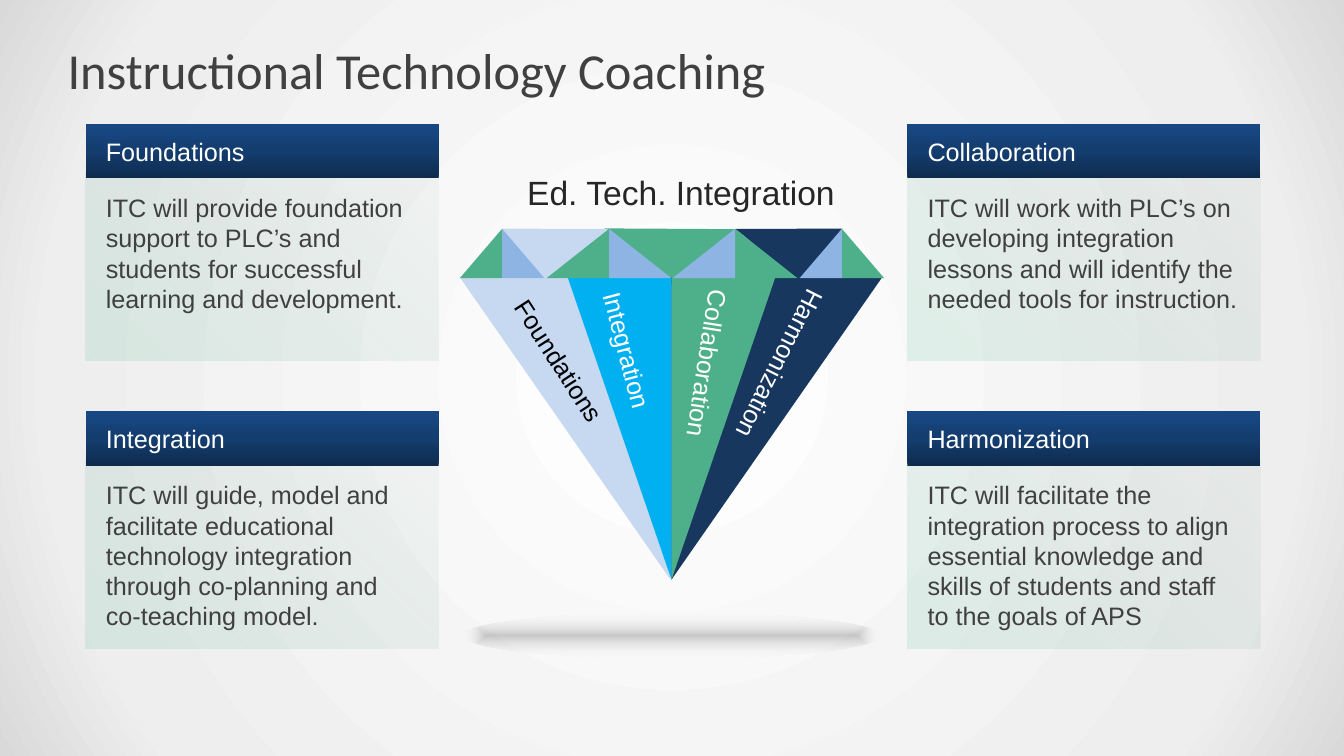
from lxml import etree
from pptx import Presentation
from pptx.dml.color import RGBColor as RGB
from pptx.enum.shapes import MSO_SHAPE as Shape
from pptx.enum.text import MSO_ANCHOR as Anchor, MSO_AUTO_SIZE as Auto, PP_ALIGN as Align
from pptx.oxml.ns import qn
from pptx.util import Pt

PX = 9144  # 100 px to the inch
WHITE, BLACK = RGB(255, 255, 255), RGB(0, 0, 0)
GREY, INK = RGB(0x40, 0x40, 0x40), RGB(0x26, 0x26, 0x26)
GREEN, NAVY = RGB(0x4E, 0xB0, 0x8A), RGB(0x17, 0x37, 0x5E)
PALE, BLUE, CYAN = RGB(0xC6, 0xD9, 0xF1), RGB(0x8E, 0xB4, 0xE3), RGB(0, 0xB0, 0xF0)

# Gradient stops: percent, colour, opacity in percent
GLOW = [(0, WHITE, 100), (81, RGB(0xEE, 0xEE, 0xEE), 100), (100, RGB(0xD9, 0xD9, 0xD9), 100)]
SHADE = [(0, RGB(0x80, 0x80, 0x80), 40), (100, WHITE, 0)]
MINT = [(0, RGB(0x2A, 0x6D, 0x53), 4), (100, RGB(0x47, 0xB7, 0x8C), 15)]
DEEP = [(0, RGB(0x0E, 0x2B, 0x4E), 100), (50, RGB(0x14, 0x3D, 0x6F), 100),
        (100, RGB(0x18, 0x48, 0x84), 100)]
MIDDLE, CORNER = (50, 50, 50, 50), (100, 0, 0, 100)

TITLE = "Instructional Technology Coaching"
CAPTION = "Ed. Tech. Integration"
# Column by column, top to bottom
CARDS = [
    ("Foundations", "ITC will provide foundation support to PLC’s and students "
     "for successful learning and development."),
    ("Integration", "ITC will guide, model and facilitate educational technology "
     "integration through co-planning and co-teaching model."),
    ("Collaboration", "ITC will work with PLC’s on developing integration lessons "
     "and will identify the needed tools for instruction."),
    ("Harmonization", "ITC will facilitate the integration process to align essential "
     "knowledge and skills of students and staff to the goals of APS"),
]
# Triangles: box, apex (0 left, 1 right), turn, colour
FACETS = [
    ((615, 184, 104, 86), 1, 39.9, GREEN),
    ((742, 193, 81, 68), 1, 39.9, NAVY),
    ((510, 193, 81, 68), 0, 320.1, PALE),
    ((666, 275, 209, 300), 1, 180, NAVY),
    ((456, 275, 209, 300), 0, 180, PALE),
    ((666, 275, 103, 300), 1, 180, GREEN),
    ((563, 275, 103, 300), 0, 180, CYAN),
]
# Crown triangles: left, width, apex, colour
CROWN = [(456, 42, 1, GREEN), (498, 42, 0, BLUE), (542, 62, 1, GREEN), (604, 62, 0, BLUE),
         (835, 42, 0, GREEN), (793, 42, 1, BLUE), (729, 62, 0, GREEN), (667, 62, 1, BLUE)]
FACETS += [((x, 227, w, 49), apex, 0, tint) for x, w, apex, tint in CROWN]
# Labels: box, turn, colour
LABELS = [((451, 384, 267, 40), 57.1, BLACK), ((505, 390, 267, 40), 75.3, WHITE),
          ((513, 431, 350, 40), 98.7, WHITE), ((561, 417, 350, 40), 116.7, WHITE)]


def scale(box):
    return [n * PX for n in box]


def blend(fill, owner, stops, kind, focus=None):
    """Give owner a gradient: a path around focus, or upward when there is no focus."""
    fill.solid()
    grad = etree.Element(qn("a:gradFill"), rotWithShape="1")
    row = etree.SubElement(grad, qn("a:gsLst"))
    for pos, tint, alpha in stops:
        stop = etree.SubElement(row, qn("a:gs"), pos=str(pos * 1000))
        clr = etree.SubElement(stop, qn("a:srgbClr"), val=str(tint))
        if alpha < 100:
            etree.SubElement(clr, qn("a:alpha"), val=str(alpha * 1000))
    if focus:
        way = etree.SubElement(grad, qn("a:path"), attrib={"path": kind})
        sides = {side: str(n * 1000) for side, n in zip("ltrb", focus)}
        etree.SubElement(way, qn("a:fillToRect"), attrib=sides)
    else:
        etree.SubElement(grad, qn("a:lin"), ang="16200000", scaled="0")
    owner.replace(owner.find(qn("a:solidFill")), grad)


def write(shape, text, size, tint, font="Arial", inset=(10, 5), anchor=Anchor.TOP, wrap=True):
    frame = shape.text_frame
    frame.text = text
    frame.word_wrap, frame.vertical_anchor = wrap, anchor
    frame.auto_size = Auto.NONE
    frame.margin_left = frame.margin_right = inset[0] * PX
    frame.margin_top = frame.margin_bottom = inset[1] * PX
    para = frame.paragraphs[0]
    para.alignment = Align.LEFT
    face = para.runs[0].font
    face.name, face.size, face.color.rgb = font, Pt(size), tint


def draw(shapes, kind, box):
    shape = shapes.add_shape(kind, *scale(box))
    shape.shadow.inherit = False
    shape.line.fill.background()
    return shape


def add_gem(shapes):
    base = draw(shapes, Shape.OVAL, (460, 608, 412, 45))
    blend(base.fill, base.element.spPr, SHADE, "shape", MIDDLE)
    for box, apex, turn, tint in FACETS:
        facet = draw(shapes, Shape.ISOSCELES_TRIANGLE, box)
        facet.adjustments[0] = apex
        facet.rotation = turn
        facet.fill.solid()
        facet.fill.fore_color.rgb = tint
    head = shapes.add_textbox(*scale((513, 166, 328, 50)))
    write(head, CAPTION, 24, INK, wrap=False)
    for (name, _), (box, turn, tint) in zip(CARDS, LABELS):
        label = shapes.add_textbox(*scale(box))
        label.rotation = turn
        write(label, name, 18, tint)


def add_card(shapes, x, y, name, text):
    body = draw(shapes, Shape.RECTANGLE, (x, y + 48, 350, 187))
    blend(body.fill, body.element.spPr, MINT, "circle", CORNER)
    write(body, text, 18, GREY, inset=(20, 20))
    bar = draw(shapes, Shape.RECTANGLE, (x, y, 350, 54))
    blend(bar.fill, bar.element.spPr, DEEP, "linear")
    write(bar, name, 18, WHITE, inset=(20, 5), anchor=Anchor.MIDDLE)


def main():
    deck = Presentation()
    deck.slide_width, deck.slide_height = scale((1333, 750))
    slide = deck.slides.add_slide(deck.slide_layouts[5])
    back = slide.background.fill
    back.solid()
    blend(back, slide.element.find(".//" + qn("p:bgPr")), GLOW, "circle", MIDDLE)

    title = slide.shapes.title
    title.left, title.top, title.width, title.height = scale((67, 30, 1200, 78))
    write(title, TITLE, 36, GREY, font="Calibri", inset=(0, 7), anchor=Anchor.MIDDLE)

    add_gem(slide.shapes.add_group_shape().shapes)
    for i, (name, text) in enumerate(CARDS):
        col, row = divmod(i, 2)
        group = slide.shapes.add_group_shape()
        add_card(group.shapes, 85 + col * 815, 123 + row * 285, name, text)
    deck.save("out.pptx")


if __name__ == "__main__":
    main()
